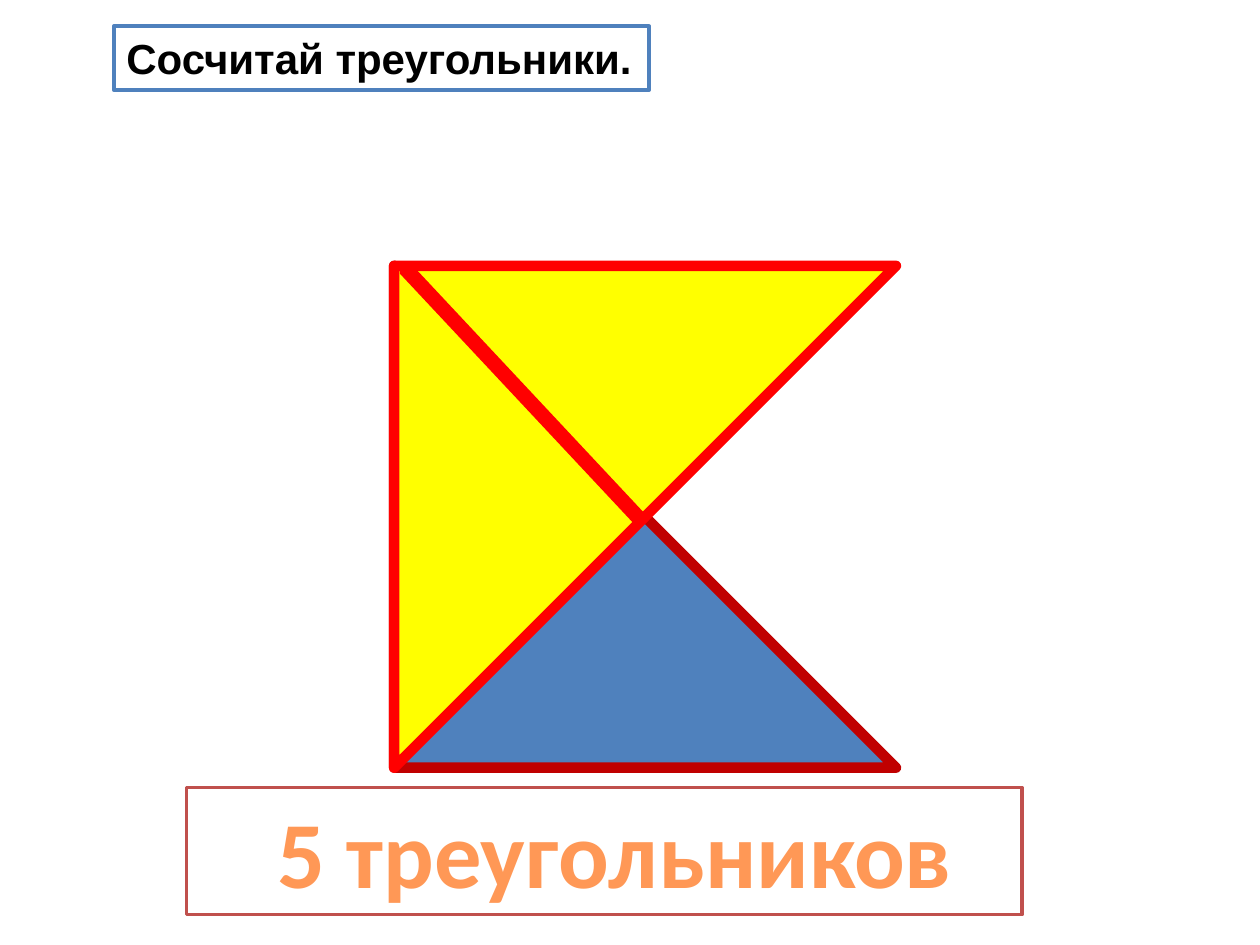
from dataclasses import dataclass

from pptx import Presentation
from pptx.dml.color import RGBColor
from pptx.enum.shapes import MSO_SHAPE
from pptx.enum.text import MSO_ANCHOR, PP_ALIGN
from pptx.util import Pt

RIGHT_TRIANGLE = MSO_SHAPE.RIGHT_TRIANGLE
MINUS = MSO_SHAPE.MATH_MINUS
TOP = MSO_ANCHOR.TOP
LEFT, CENTER = PP_ALIGN.LEFT, PP_ALIGN.CENTER
TITLE_ONLY = 5


@dataclass(frozen=True)
class Theme:
    white: str = "FFFFFF"
    black: str = "000000"
    blue: str = "4F81BD"
    yellow: str = "FFFF00"
    red: str = "FF0000"
    dark_red: str = "C00000"
    frame_red: str = "C0504D"
    orange: str = "FF9856"
    title_font: str = "Arial"
    answer_font: str = "Calibri"
    title_size: int = 24
    answer_size: int = 54
    thick: int = 6
    thin: int = 2


class PuzzlePage:
    def __init__(self, page, theme):
        self.page = page
        self.theme = theme

    def paint(self, shape, fill, line, width):
        shape.fill.solid()
        shape.fill.fore_color.rgb = RGBColor.from_string(fill)
        shape.line.color.rgb = RGBColor.from_string(line)
        shape.line.width = Pt(width)

    def figure(self, kind, frame, fill, line, width, rotation=0):
        shape = self.page.shapes.add_shape(kind, *map(Pt, frame))
        shape.shadow.inherit = False
        shape.rotation = rotation
        self.paint(shape, fill, line, width)

    def framed_text(self, box, frame, text, line, font, size, color, align):
        box.left, box.top, box.width, box.height = map(Pt, frame)
        self.paint(box, self.theme.white, line, self.theme.thin)
        text_frame = box.text_frame
        text_frame.word_wrap = False
        text_frame.vertical_anchor = TOP
        text_frame.text = text
        para = text_frame.paragraphs[0]
        para.alignment = align
        para.font.name = font
        para.font.size = Pt(size)
        para.font.bold = True
        para.font.color.rgb = RGBColor.from_string(color)

    def title(self, frame, text):
        theme = self.theme
        self.framed_text(self.page.shapes.title, frame, text, theme.blue,
                         theme.title_font, theme.title_size, theme.black, LEFT)

    def answer(self, frame, text):
        theme = self.theme
        box = self.page.shapes.add_textbox(*map(Pt, frame))
        self.framed_text(box, frame, text, theme.frame_red,
                         theme.answer_font, theme.answer_size, theme.orange, CENTER)


def main():
    theme = Theme()
    deck = Presentation()
    deck.slide_width, deck.slide_height = Pt(720), Pt(540)
    page = deck.slides.add_slide(deck.slide_layouts[TITLE_ONLY])
    puzzle = PuzzlePage(page, theme)

    square = (225.2, 151.9, 286.8, 286.8)
    diagonal = (164.2, 212.4, 270.7, 27.4)
    puzzle.figure(RIGHT_TRIANGLE, square, theme.blue, theme.dark_red, theme.thick)
    puzzle.figure(RIGHT_TRIANGLE, square, theme.yellow, theme.red, theme.thick, 90)
    puzzle.figure(MINUS, diagonal, theme.red, theme.red, theme.thin, 46.9)
    puzzle.title((65, 15, 306, 36.5), "Сосчитай треугольники.")
    puzzle.answer((106.6, 450, 477.4, 72.7), " 5 треугольников")

    deck.save("out.pptx")


if __name__ == "__main__":
    main()
